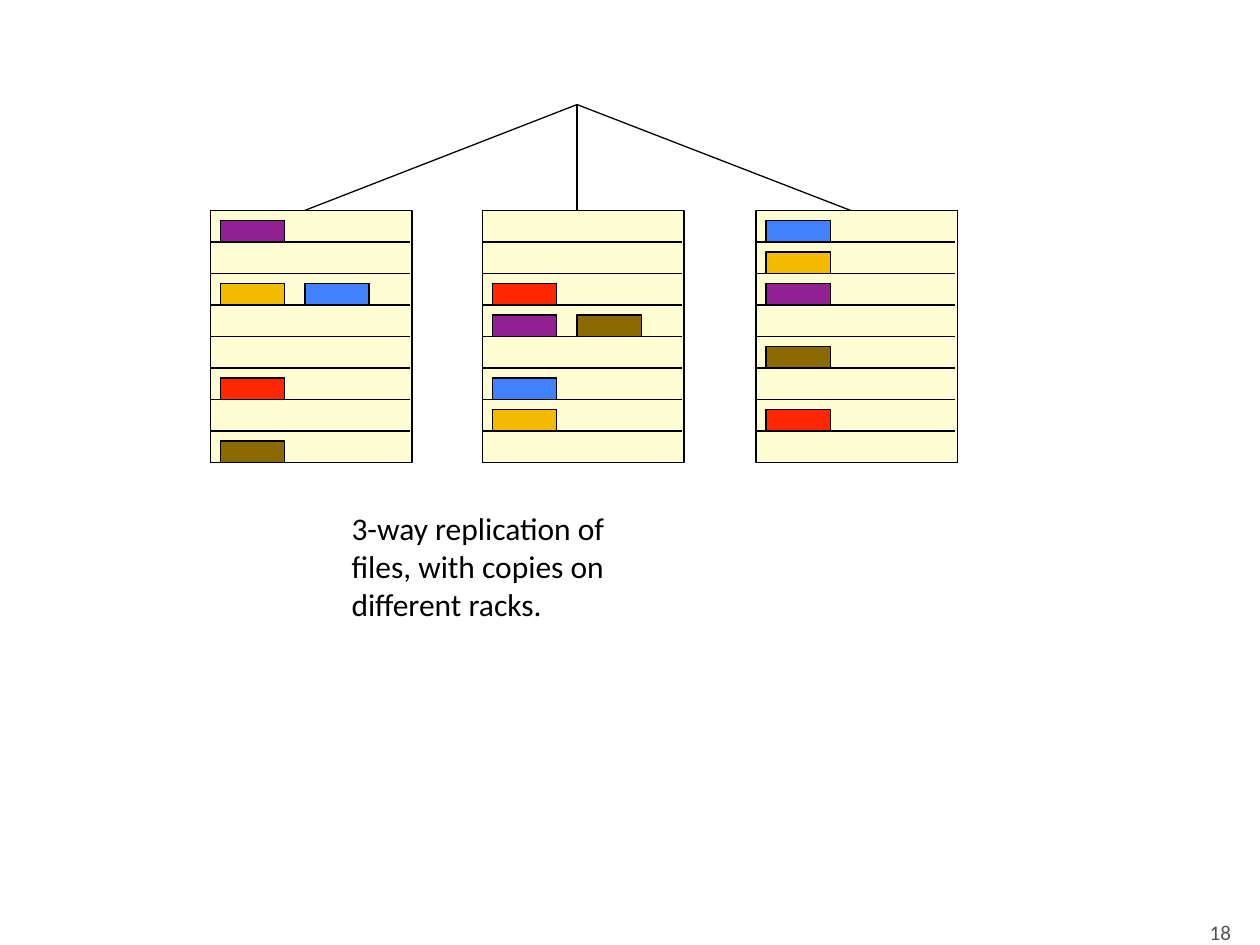
"""Build a slide showing three-way replication of files across racks."""
import lxml.etree
import pptx
import pptx.dml.color
import pptx.enum.shapes
import pptx.enum.text
import pptx.oxml.ns
import pptx.util

Inches = pptx.util.Inches
qn = pptx.oxml.ns.qn


def color(value):
    """Return the colour for a hex string."""
    return pptx.dml.color.RGBColor.from_string(value)


def draw(shapes, kind, left, top, right, bottom, fill=None):
    """Add a black line, or a filled rectangle with a black outline."""
    if kind == "line":
        shape = shapes.add_connector(
            pptx.enum.shapes.MSO_CONNECTOR.STRAIGHT,
            Inches(left), Inches(top), Inches(right), Inches(bottom))
        lxml.etree.SubElement(shape._element.spPr, qn("a:effectLst"))
    else:
        shape = shapes.add_shape(
            pptx.enum.shapes.MSO_SHAPE.RECTANGLE,
            Inches(left), Inches(top), Inches(right - left), Inches(bottom - top))
        shape.shadow.inherit = False
        shape.fill.solid()
        shape.fill.fore_color.rgb = color(fill)
    shape.line.color.rgb = color("000000")
    shape.line.width = pptx.util.Pt(0.75)
    return shape


deck = pptx.Presentation()
deck.slide_width, deck.slide_height = Inches(10), Inches(7.5)
page = deck.slides.add_slide(deck.slide_layouts[6])

rack_lefts = [1.67, 3.83, 6]
rack_top, shelf_height, shelf_count = 1.67, 0.25, 8
for left in rack_lefts:
    rack = page.shapes.add_group_shape()
    frame = draw(rack.shapes, "rectangle", left, rack_top, left + 1.6,
                 rack_top + shelf_count * shelf_height, "FFFDA9")
    fill_color = frame._element.spPr.find(qn("a:solidFill"))[0]
    lxml.etree.SubElement(fill_color, qn("a:alpha")).set("val", "50000")
    for shelf in range(1, shelf_count):
        height = rack_top + shelf * shelf_height
        draw(rack.shapes, "line", left, height, left + 1.58, height)

for rack_center in [2.42, 4.58, 6.75]:
    draw(page.shapes, "line", rack_center, rack_top, 4.58, 0.83)

file_places = {
    "942193": [(0, 0, 0), (1, 3, 0), (2, 2, 0)],
    "F4BA00": [(0, 2, 0), (1, 6, 0), (2, 1, 0)],
    "4180FF": [(0, 2, 1), (1, 5, 0), (2, 0, 0)],
    "FF2600": [(0, 5, 0), (1, 2, 0), (2, 6, 0)],
    "8B6900": [(0, 7, 0), (1, 3, 1), (2, 4, 0)],
}
for fill, places in file_places.items():
    for rack_index, shelf, slot in places:
        left = rack_lefts[rack_index] + 0.08 + 0.67 * slot
        top = rack_top + 0.08 + shelf * shelf_height
        draw(page.shapes, "rectangle", left, top, left + 0.51, top + 0.17, fill)

anchors, aligns = pptx.enum.text.MSO_ANCHOR, pptx.enum.text.PP_ALIGN
texts = [
    (["3-way replication of", "files, with copies on", "different racks."],
     (2.75, 4, 2.34, 1), 0.04, anchors.TOP, aligns.LEFT, 18, "000000"),
    (["18"], (9.57, 7.29, 0.2, 0.21), 0, anchors.BOTTOM, aligns.RIGHT, 12, "535353"),
]
for lines, place, inset, anchor, align, size, text_color in texts:
    box = page.shapes.add_textbox(*map(Inches, place))
    frame_format = {
        "word_wrap": False,
        "auto_size": pptx.enum.text.MSO_AUTO_SIZE.SHAPE_TO_FIT_TEXT,
        "vertical_anchor": anchor,
        "margin_left": Inches(inset), "margin_right": Inches(inset),
        "margin_top": Inches(inset), "margin_bottom": Inches(inset),
    }
    for name, value in frame_format.items():
        setattr(box.text_frame, name, value)
    box.text_frame.text = "\n".join(lines)
    for para in box.text_frame.paragraphs:
        para.alignment = align
        for span in para.runs:
            for name, value in {"name": "Calibri", "size": pptx.util.Pt(size)}.items():
                setattr(span.font, name, value)
            span.font.color.rgb = color(text_color)

deck.save("out.pptx")
